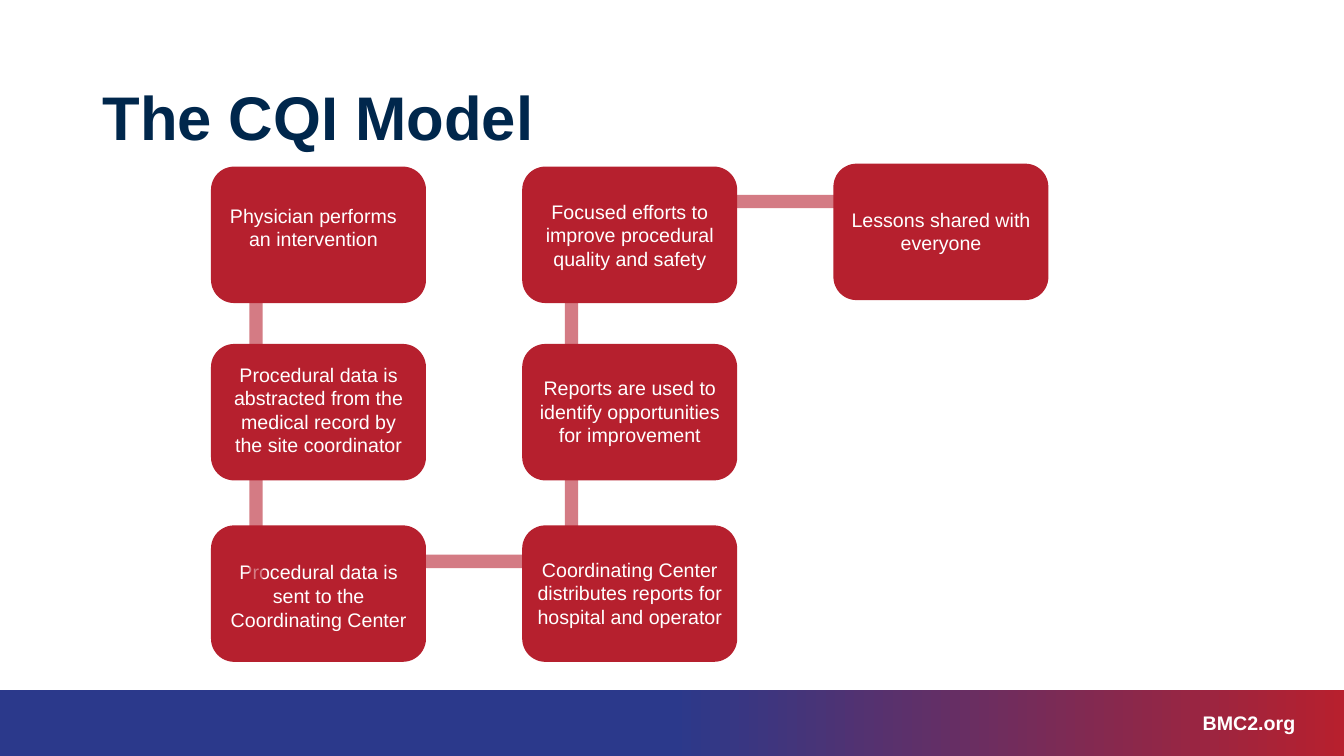
from dataclasses import dataclass

from lxml.etree import SubElement
from pptx import Presentation
from pptx.dml.color import RGBColor
from pptx.enum.shapes import MSO_CONNECTOR, MSO_SHAPE
from pptx.enum.text import MSO_ANCHOR, PP_ALIGN
from pptx.oxml.ns import qn
from pptx.shapes.autoshape import Shape
from pptx.slide import Slide
from pptx.util import Pt

RED = RGBColor(0xB6, 0x20, 0x2E)
BAND_RED = RGBColor(0xB7, 0x20, 0x2E)
BLUE = RGBColor(0x2B, 0x39, 0x8B)
NAVY = RGBColor(0x00, 0x27, 0x4C)
WHITE = RGBColor(0xFF, 0xFF, 0xFF)

WIDTH, HEIGHT = 960, 540
BAND_TOP = 493.2
COLS = [151.2 + 222.3 * col for col in range(3)]
ROWS = [119.5, 246.2, 375.8]
BOX_WIDTH, BOX_HEIGHT = 152.6, 96.5
TEXT_WIDTH = 146.9


@dataclass(frozen=True)
class Step:
    text: str
    left: float
    top: float
    text_top: float
    text_high: float
    inset: float = 3


@dataclass(frozen=True)
class Link:
    x1: float
    y1: float
    x2: float
    y2: float


STEPS = [
    Step("Physician performs an intervention", COLS[0], ROWS[0], 141.8, 41, -0.7),
    Step("Procedural data is abstracted from the medical record by the site coordinator",
         COLS[0], ROWS[1], 255.6, 74.9),
    Step("Procedural data is sent to the Coordinating Center",
         COLS[0], ROWS[2], 396.7, 58.3),
    Step("Coordinating Center distributes reports for hospital and operator",
         COLS[1], ROWS[2], 394.6, 58.3),
    Step("Reports are used to identify opportunities for improvement",
         COLS[1], ROWS[1], 265, 58.3),
    Step("Focused efforts to improve procedural quality and safety",
         COLS[1], ROWS[0], 139, 58.3),
    Step("Lessons shared with everyone", COLS[2], 117.4, 144.7, 41),
]

LINKS = [
    Link(182.9, 165.6, 182.9, 265),
    Link(408.2, 172.8, 408.2, 424.1),
    Link(403.9, 401, 204.5, 401),
    Link(688.3, 144, 488.9, 144),
]
TOP_LINK = Link(182.9, 324, 182.9, 424.1)


def add_text(slide: Slide, text: str, left: float, top: float, width: float,
             high: float, size: float, color: RGBColor, align: PP_ALIGN,
             bold: bool = False) -> Shape:
    box = slide.shapes.add_textbox(Pt(left), Pt(top), Pt(width), Pt(high))
    frame = box.text_frame
    frame.word_wrap = True
    frame.text = text
    para = frame.paragraphs[0]
    para.alignment = align
    font = para.runs[0].font
    font.name = "Arial"
    font.size = Pt(size)
    font.bold = bold
    font.color.rgb = color
    return box


def add_band(slide: Slide) -> None:
    band = slide.shapes.add_shape(MSO_SHAPE.RECTANGLE, Pt(0), Pt(BAND_TOP),
                                  Pt(WIDTH), Pt(HEIGHT - BAND_TOP))
    band.shadow.inherit = False
    band.line.fill.background()
    band.fill.gradient()
    band.fill.gradient_angle = 0
    shades = [(0.5, BLUE), (1, BAND_RED)]
    for stop, (place, color) in zip(band.fill.gradient_stops, shades):
        stop.position = place
        stop.color.rgb = color
    add_text(slide, "BMC2.org", 735.1, 504, 197.3, 24.5, 14, WHITE,
             PP_ALIGN.RIGHT, True)


def add_title(slide: Slide) -> None:
    title = add_text(slide, "The CQI Model", 66.2, 28.8, 828, 104.4, 44, NAVY,
                     PP_ALIGN.LEFT, True)
    title.text_frame.vertical_anchor = MSO_ANCHOR.MIDDLE
    para = title.text_frame.paragraphs[0]
    para.line_spacing = 1.07
    para.space_after = Pt(8)


def add_box(slide: Slide, step: Step) -> None:
    box = slide.shapes.add_shape(MSO_SHAPE.ROUNDED_RECTANGLE, Pt(step.left),
                                 Pt(step.top), Pt(BOX_WIDTH), Pt(BOX_HEIGHT))
    box.shadow.inherit = False
    box.fill.solid()
    box.fill.fore_color.rgb = RED
    box.line.color.rgb = RED
    box.line.width = Pt(1)


def add_link(slide: Slide, link: Link) -> None:
    line = slide.shapes.add_connector(MSO_CONNECTOR.STRAIGHT, Pt(link.x1),
                                      Pt(link.y1), Pt(link.x2), Pt(link.y2))
    line.line.color.rgb = RED
    line.line.width = Pt(9.5)
    props = line._element.spPr
    tint = props.find(".//" + qn("a:srgbClr"))
    SubElement(tint, qn("a:alpha")).set("val", "58000")
    SubElement(props, qn("a:effectLst"))


def main() -> None:
    deck = Presentation()
    deck.slide_width, deck.slide_height = Pt(WIDTH), Pt(HEIGHT)
    slide = deck.slides.add_slide(deck.slide_layouts[6])
    add_band(slide)
    add_title(slide)
    first, *others = STEPS
    for step in others:
        add_box(slide, step)
    for link in LINKS:
        add_link(slide, link)
    add_box(slide, first)
    for step in STEPS:
        add_text(slide, step.text, step.left + step.inset, step.text_top,
                 TEXT_WIDTH, step.text_high, 14, WHITE, PP_ALIGN.CENTER)
    add_link(slide, TOP_LINK)
    deck.save("out.pptx")


if __name__ == "__main__":
    main()
